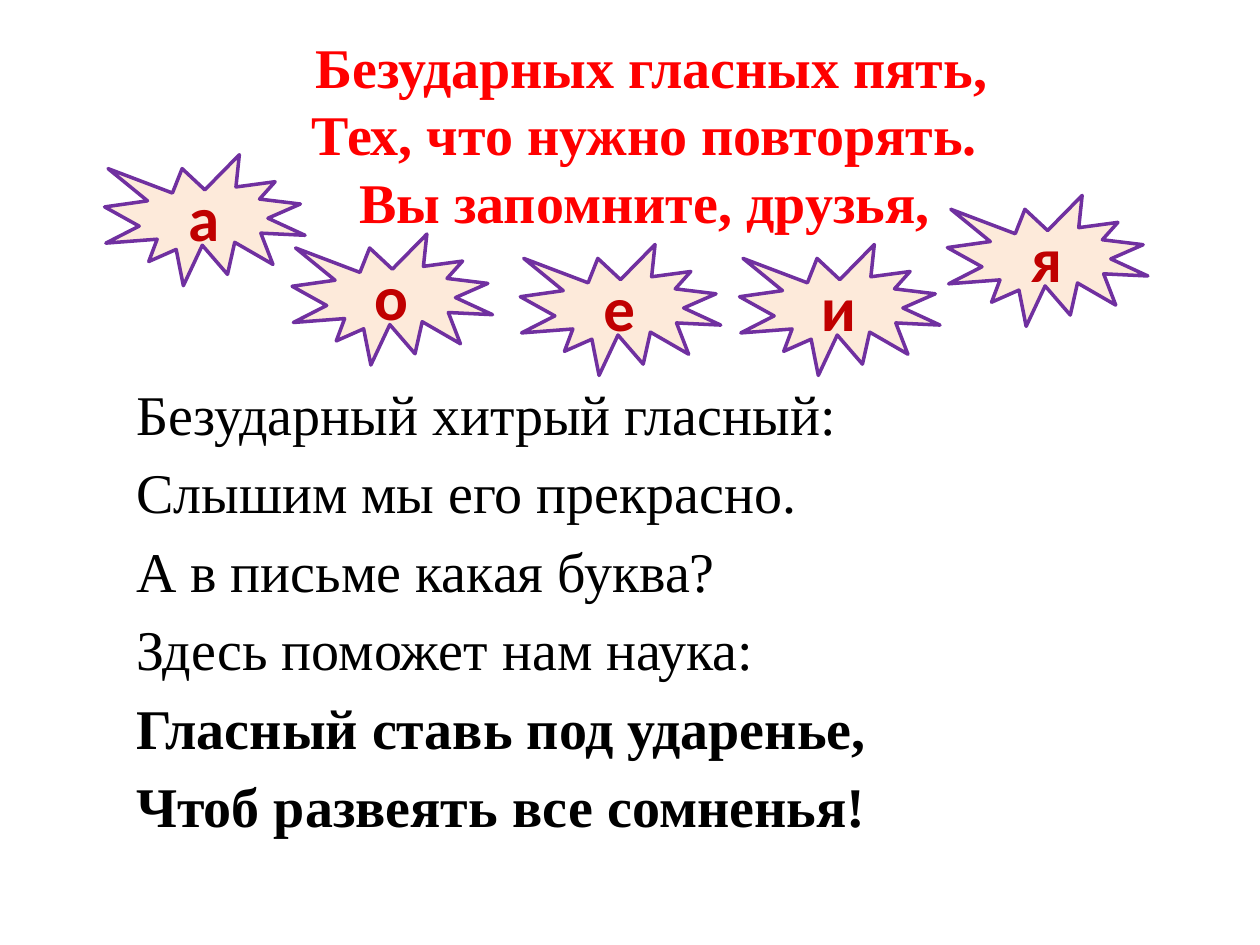
import pptx
import pptx.dml.color
import pptx.enum.shapes
import pptx.enum.text
import pptx.oxml
import pptx.util
from pptx.util import Cm

SERIF = "Times New Roman"


def color(value):
    return pptx.dml.color.RGBColor.from_string(value)


def write(para, text, font=SERIF, size=32, shade="000000", bold=False, align="LEFT"):
    para.alignment = getattr(pptx.enum.text.PP_ALIGN, align)
    span = para.add_run()
    span.text = text
    span.font.name = font
    span.font.size = pptx.util.Pt(size)
    span.font.bold = bold
    span.font.color.rgb = color(shade)


class Poster:
    """Holds the style and the current page, and draws each kind of element."""

    seal_fill, seal_line, seal_text = "FDEADA", "7030A0", "C00000"
    heading = "FF0000"

    def __init__(self, deck):
        self.page = deck.slides.add_slide(deck.slide_layouts[1])

    def place(self, box, left, top, width, height):
        box.left, box.top, box.width, box.height = map(Cm, (left, top, width, height))
        frame = box.text_frame
        frame.word_wrap = True
        frame.auto_size = pptx.enum.text.MSO_AUTO_SIZE.NONE
        frame.vertical_anchor = pptx.enum.text.MSO_ANCHOR.TOP
        return frame

    def paragraphs(self, frame, lines):
        for number, line in enumerate(lines):
            yield (frame.add_paragraph() if number else frame.paragraphs[0]), line

    def title(self, lines, *area):
        frame = self.place(self.page.shapes.title, *area)
        for para, line in self.paragraphs(frame, lines):
            write(para, line, shade=self.heading, bold=True, align="CENTER")

    def verse(self, lines, bold_from, *area):
        frame = self.place(self.page.placeholders[1], *area)
        for number, (para, line) in enumerate(self.paragraphs(frame, lines)):
            properties = para._p.get_or_add_pPr()
            properties.set("marL", str(Cm(0.95)))
            properties.set("indent", str(-Cm(0.95)))
            pptx.oxml.ns
            properties.append(pptx.oxml.parse_xml(
                f"<a:buNone {pptx.oxml.ns.nsdecls('a')}/>"))
            para.space_before = pptx.util.Pt(6.4 if number else 0)
            write(para, line, bold=number >= bold_from)

    def seal(self, letter, left, top):
        shape = self.page.shapes.add_shape(
            pptx.enum.shapes.MSO_SHAPE.EXPLOSION1, Cm(left), Cm(top), Cm(4.04), Cm(2.64))
        shape.shadow.inherit = False
        shape.fill.solid()
        shape.fill.fore_color.rgb = color(self.seal_fill)
        shape.line.color.rgb = color(self.seal_line)
        shape.line.width = pptx.util.Pt(2)
        shape.text_frame.vertical_anchor = pptx.enum.text.MSO_ANCHOR.MIDDLE
        write(shape.text_frame.paragraphs[0], letter, font="Calibri", size=36,
              shade=self.seal_text, bold=True, align="CENTER")


def main():
    deck = pptx.Presentation()
    deck.slide_width, deck.slide_height = Cm(25.4), Cm(19.05)
    poster = Poster(deck)
    poster.verse([
        "Безударный хитрый гласный:",
        "Слышим мы его прекрасно.",
        "А в письме какая буква?",
        "Здесь поможет нам наука:",
        "Гласный ставь под ударенье,",
        "Чтоб развеять все сомненья!",
    ], 4, 2.49, 7.52, 19.84, 8.28)
    poster.title([
        "Безударных гласных пять,",
        "Тех, что нужно повторять. ",
        "Вы запомните, друзья, ",
    ], 2.9, 0.53, 20.47, 4.37)
    for letter, left, top in [("а", 2.11, 3.12), ("о", 5.89, 4.72), ("е", 10.49, 4.93),
                              ("и", 14.91, 4.93), ("я", 19.1, 3.94)]:
        poster.seal(letter, left, top)
    deck.save("out.pptx")


if __name__ == "__main__":
    main()
